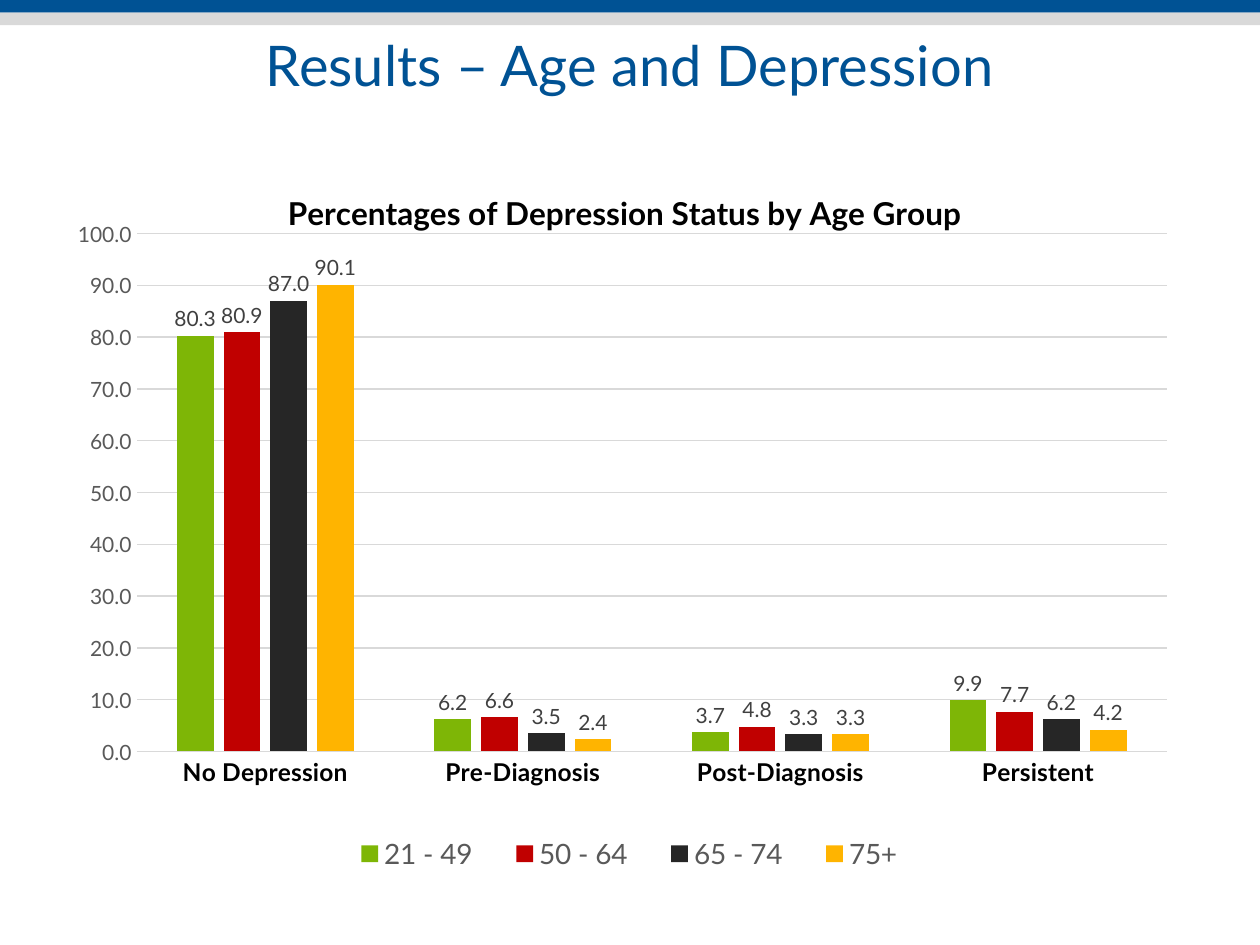
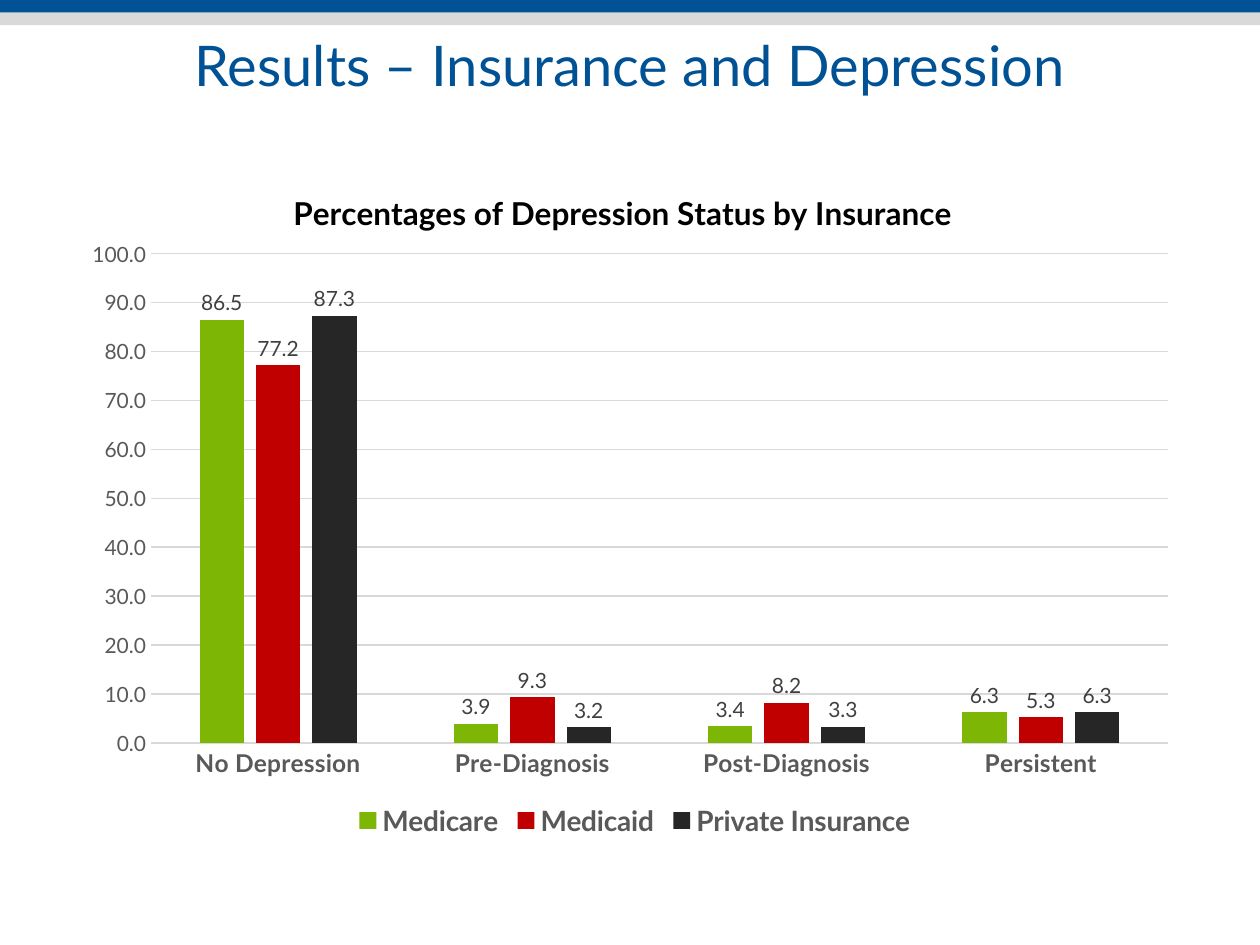
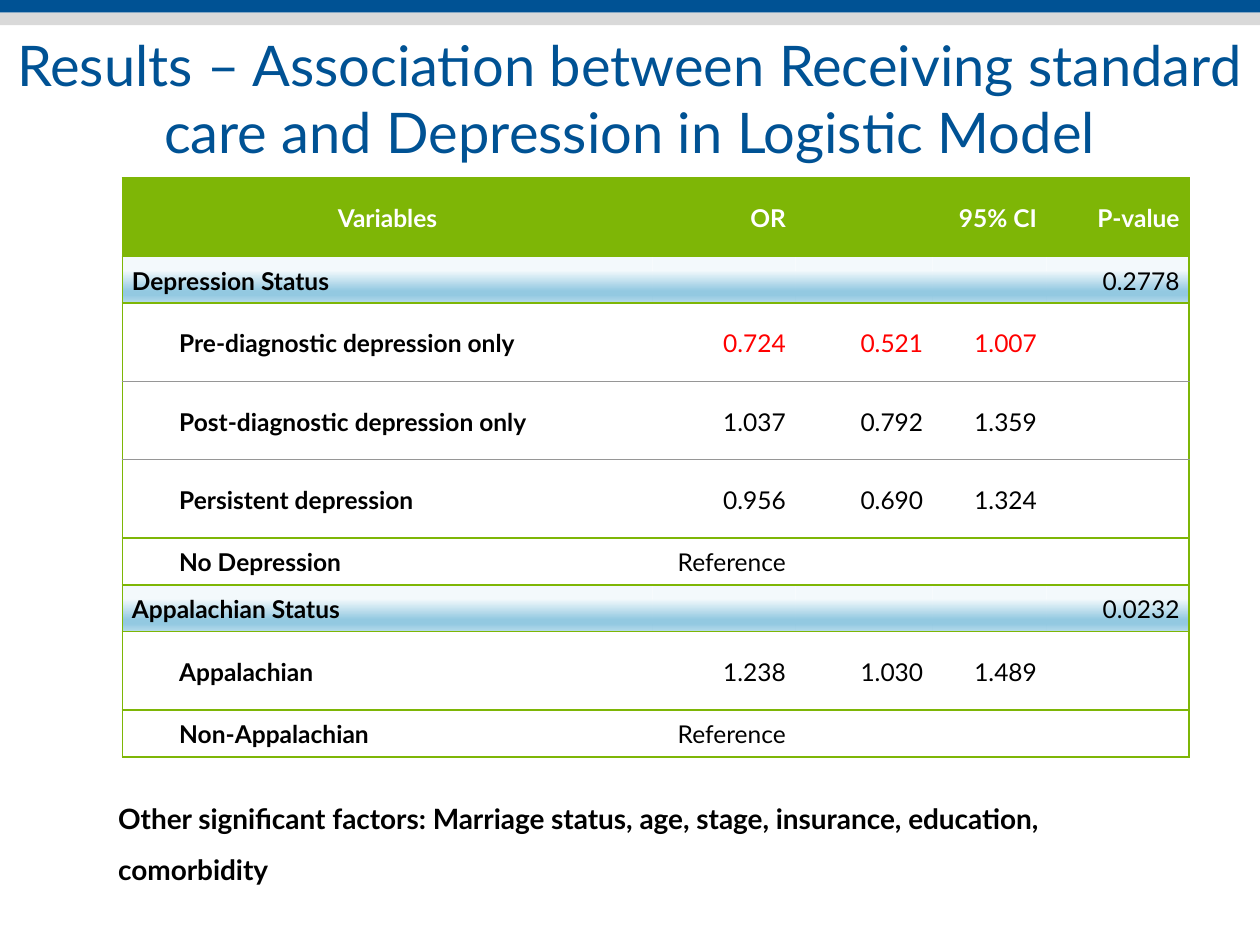
from lxml import etree
from pptx import Presentation
from pptx import util as u
from pptx.chart import data as cd
from pptx.dml.color import RGBColor
from pptx.enum import chart as ce, shapes, text
from pptx.oxml import ns

Pt = u.Pt
FONT = "Lato"
BLUE = RGBColor(0x00, 0x52, 0x94)
SILVER = RGBColor(0xD9, 0xD9, 0xD9)
GREEN = RGBColor(0x7E, 0xB6, 0x06)
CRIMSON = RGBColor(0xC0, 0x00, 0x00)
COAL = RGBColor(0x26, 0x26, 0x26)
AMBER = RGBColor(0xFF, 0xB4, 0x00)
GRAY = RGBColor(0x59, 0x59, 0x59)
DARK = RGBColor(0x40, 0x40, 0x40)
RULE = RGBColor(0x96, 0x96, 0x96)
BLACK = RGBColor(0, 0, 0)
WHITE = RGBColor(0xFF, 0xFF, 0xFF)
RED = RGBColor(0xFF, 0x00, 0x00)
LEFT, MID, RIGHT = text.PP_ALIGN.LEFT, text.PP_ALIGN.CENTER, text.PP_ALIGN.RIGHT


def style(font, size, color, bold=False):
    """Format a font, or write text into a frame through say()."""
    font.name, font.size, font.bold = FONT, Pt(size), bold
    font.color.rgb = color


def say(frame, words, size=14, color=BLACK, bold=False, align=LEFT, lead=None, after=0):
    frame.word_wrap = True
    para = frame.paragraphs[0]
    para.alignment = align
    para.space_after = Pt(after)
    if lead:
        para.line_spacing = lead
    run = para.add_run()
    run.text = words
    style(run.font, size, color, bold)
    return para


deck = Presentation()
deck.slide_width, deck.slide_height = Pt(720), Pt(540)

# Shared bands and titles
titles = [
    "Results – Age and Depression",
    "Results – Insurance and Depression",
    "Results – Association between Receiving standard care and Depression in Logistic Model",
]
slides = []
for title in titles:
    slide = deck.slides.add_slide(deck.slide_layouts[6])
    for row, color in enumerate((BLUE, SILVER)):
        band = slide.shapes.add_shape(
            shapes.MSO_SHAPE.RECTANGLE, 0, Pt(7.2 * row), Pt(720), Pt(7.2))
        band.shadow.inherit = False
        band.fill.solid()
        band.fill.fore_color.rgb = color
        band.line.fill.background()
    box = slide.shapes.add_textbox(0, Pt(13.7), Pt(720), Pt(88))
    say(box.text_frame, title, size=32, color=BLUE, align=MID)
    slides.append(slide)

# Charts: layouts are shares of the chart's width and height
cats = ["No Depression", "Pre-Diagnosis", "Post-Diagnosis", "Persistent"]
charts = [
    dict(head="Percentages of Depression Status by Age Group", tall=420.5,
         ink=BLACK, bold=False,
         spots=dict(title=(0.19, 0.04), plot=(0.06, 0.107, 0.92, 0.704),
                    legend=(0.23, 0.91, 0.54, 0.08)),
         rows={"21 - 49": (80.3, 6.2, 3.7, 9.9), "50 - 64": (80.9, 6.6, 4.8, 7.7),
               "65 - 74": (87.0, 3.5, 3.3, 6.2), "75+": (90.1, 2.4, 3.3, 4.2)}),
    dict(head="Percentages of Depression Status by Insurance", tall=394.5,
         ink=GRAY, bold=True,
         spots=dict(title=(0.195, 0.043), plot=(0.073, 0.143, 0.908, 0.709),
                    legend=(0.25, 0.94, 0.51, 0.06)),
         rows={"Medicare": (86.5, 3.9, 3.4, 6.3), "Medicaid": (77.2, 9.3, 8.2, 5.3),
               "Private Insurance": (87.3, 3.2, 3.3, 6.3)}),
]
for slide, item in zip(slides, charts):
    data = cd.CategoryChartData(number_format="0.0")
    data.categories = cats
    for name, vals in item["rows"].items():
        data.add_series(name, vals)
    chart = slide.shapes.add_chart(
        ce.XL_CHART_TYPE.COLUMN_CLUSTERED, Pt(39.6), Pt(88.5), Pt(640), Pt(item["tall"]),
        data).chart
    style(chart.font, 10, BLACK)
    say(chart.chart_title.text_frame, item["head"], size=18, bold=True, align=MID)

    # Columns and their labels
    plot = chart.plots[0]
    plot.gap_width, plot.overlap, plot.vary_by_categories = 219, -27, False
    for bar, color in zip(plot.series, (GREEN, CRIMSON, COAL, AMBER)):
        bar.format.fill.solid()
        bar.format.fill.fore_color.rgb = color
        tags = bar.data_labels
        tags.show_value = True
        tags.number_format, tags.number_format_is_linked = "0.0", False
        tags.position = ce.XL_LABEL_POSITION.OUTSIDE_END
        style(tags.font, 12, DARK)

    # Axes
    base, scale = chart.category_axis, chart.value_axis
    for axis in (base, scale):
        axis.major_tick_mark = axis.minor_tick_mark = ce.XL_TICK_MARK.NONE
    style(base.tick_labels.font, 14, item["ink"], True)
    style(scale.tick_labels.font, 12, GRAY)
    scale.minimum_scale, scale.maximum_scale, scale.major_unit = 0, 100, 10
    scale.tick_labels.number_format = "0.0"
    scale.tick_labels.number_format_is_linked = False
    scale.format.line.fill.background()
    for line in (base.format.line, scale.major_gridlines.format.line):
        line.color.rgb, line.width = SILVER, Pt(0.75)

    # Legend
    chart.has_legend = True
    key = chart.legend
    key.position, key.include_in_layout = ce.XL_LEGEND_POSITION.BOTTOM, False
    style(key.font, 16, GRAY, item["bold"])

    # Places of title, plot and legend
    root = chart.element.find(ns.qn("c:chart"))
    parts = dict(title="c:title", plot="c:plotArea", legend="c:legend")
    after = dict(title="c:tx", plot=None, legend="c:legendPos")
    for part, spot in item["spots"].items():
        node = root.find(ns.qn(parts[part]))
        for old in node.findall(ns.qn("c:layout")):
            node.remove(old)
        lay = etree.Element(ns.qn("c:layout"))
        hand = etree.SubElement(lay, ns.qn("c:manualLayout"))
        if part == "plot":
            etree.SubElement(hand, ns.qn("c:layoutTarget")).set("val", "inner")
        for tag in ("xMode", "yMode"):
            etree.SubElement(hand, ns.qn("c:" + tag)).set("val", "edge")
        for tag, val in zip("xywh", spot):
            etree.SubElement(hand, ns.qn("c:" + tag)).set("val", str(val))
        if after[part]:
            node.find(ns.qn(after[part])).addnext(lay)
        else:
            node.insert(0, lay)

# Table of the logistic model
HEAD, PART, TALL, LOW = "head", "part", "tall", "low"
rows = [
    (HEAD, "Variables", "OR", "95% CI", "", "P-value"),
    (PART, "Depression Status", "", "", "", "0.2778"),
    (TALL, "Pre-diagnostic depression only", "0.724", "0.521", "1.007", ""),
    (TALL, "Post-diagnostic depression only", "1.037", "0.792", "1.359", ""),
    (TALL, "Persistent depression", "0.956", "0.690", "1.324", ""),
    (LOW, "No Depression", "Reference", "", "", ""),
    (PART, "Appalachian Status", "", "", "", "0.0232"),
    (TALL, "Appalachian", "1.238", "1.030", "1.489", ""),
    (LOW, "Non-Appalachian", "Reference", "", "", ""),
]
wide = (303, 81.5, 78.5, 65, 81.5)
high = {HEAD: 44.75, TALL: 44.75, PART: 26.8, LOW: 26.8}
fade = ((30, "F3F9FC"), (74, "93C9E1"), (83, "93C9E1"), (100, "B7DBEB"))
table = slides[2].shapes.add_table(
    len(rows), len(wide), Pt(70), Pt(101.7), Pt(sum(wide)),
    Pt(sum(high[row[0]] for row in rows))).table
table.first_row = table.horz_banding = False
# Style without fills and lines
table._tbl.tblPr.find(ns.qn("a:tableStyleId")).text = "{2D5ABB26-0587-4C30-8999-92F81FD0307C}"
for col, width in zip(table.columns, wide):
    col.width = Pt(width)

for r, (kind, *words) in enumerate(rows):
    table.rows[r].height = Pt(high[kind])
    for c, word in enumerate(words):
        cell = table.cell(r, c)
        cell.margin_left = cell.margin_right = Pt(5.4)
        cell.margin_top = cell.margin_bottom = 0
        cell.vertical_anchor = text.MSO_ANCHOR.MIDDLE
        if word:
            color = WHITE if kind == HEAD else RED if r == 2 and c else BLACK
            align = RIGHT if c else MID if kind == HEAD else LEFT
            para = say(cell.text_frame, word, color=color, align=align, lead=1.07,
                       bold=kind == HEAD or c == 0)
            if c == 0 and kind in (TALL, LOW):
                para._p.get_or_add_pPr().set("marL", str(Pt(27)))

        # Borders: green frame and rules, thin gray between the tall rows
        props = cell._tc.get_or_add_tcPr()
        edges = {"L": c == 0, "R": c == len(wide) - 1, "T": True, "B": True}
        for side, drawn in edges.items():
            if not drawn:
                continue
            thin = side == "T" and r in (3, 4) or side == "B" and r in (2, 3)
            edge = etree.SubElement(props, ns.qn("a:ln" + side))
            edge.set("w", str(Pt(0.5 if thin else 1)))
            fill = etree.SubElement(edge, ns.qn("a:solidFill"))
            tint = etree.SubElement(fill, ns.qn("a:srgbClr"))
            tint.set("val", str(RULE if thin else GREEN))

        # Fills
        if kind == HEAD:
            cell.fill.solid()
            cell.fill.fore_color.rgb = GREEN
        elif kind == PART:
            grad = etree.SubElement(props, ns.qn("a:gradFill"))
            stops = etree.SubElement(grad, ns.qn("a:gsLst"))
            for place, tone in fade:
                stop = etree.SubElement(stops, ns.qn("a:gs"))
                stop.set("pos", str(place * 1000))
                etree.SubElement(stop, ns.qn("a:srgbClr")).set("val", tone)
            etree.SubElement(grad, ns.qn("a:lin")).set("ang", "5400000")
        else:
            cell.fill.background()
table.cell(0, 2).merge(table.cell(0, 3))

# Note below the table
note = slides[2].shapes.add_textbox(Pt(60.5), Pt(445), Pt(628.5), Pt(72))
say(note.text_frame,
    "Other significant factors: Marriage status, age, stage, insurance, education, comorbidity",
    size=16, bold=True, lead=1.5, after=6)

deck.save("out.pptx")
